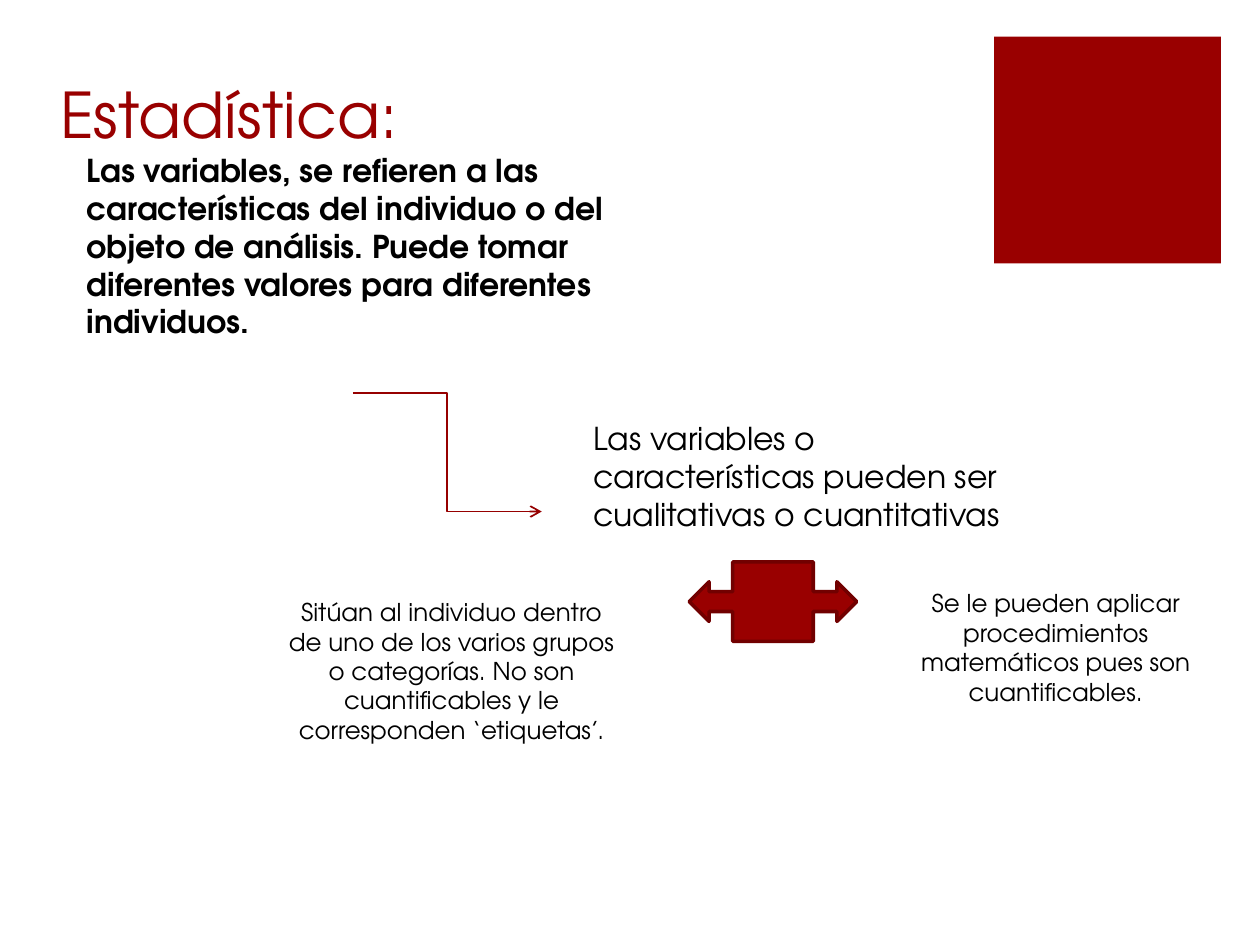
from lxml import etree
from pptx import Presentation
from pptx.dml.color import RGBColor
from pptx.enum.shapes import MSO_CONNECTOR, MSO_SHAPE
from pptx.enum.text import MSO_ANCHOR, PP_ALIGN
from pptx.oxml.ns import qn
from pptx.util import Inches, Pt

FONT = "TeX Gyre Adventor"
RED, DARK_RED, LINE_RED, BLACK = "990000", "710000", "960000", "000000"


def color(hex_value):
    return RGBColor.from_string(hex_value)


def add_text(slide, box, text, size, hex_value=BLACK, bold=False,
             align=PP_ALIGN.LEFT, anchor=MSO_ANCHOR.TOP):
    frame = slide.shapes.add_textbox(*map(Inches, box)).text_frame
    frame.word_wrap = True
    frame.vertical_anchor = anchor
    frame.text = text
    paragraph = frame.paragraphs[0]
    paragraph.alignment = align
    font = paragraph.runs[0].font
    font.name, font.size, font.bold = FONT, Pt(size), bold
    font.color.rgb = color(hex_value)


def add_block(slide, preset, box, border=None):
    block = slide.shapes.add_shape(preset, *map(Inches, box))
    block.shadow.inherit = False
    block.fill.solid()
    block.fill.fore_color.rgb = color(RED)
    if border:
        block.line.color.rgb = color(border)
        block.line.width = Pt(2)
    else:
        block.line.fill.background()


def add_elbow_arrow(slide, box):
    left, top, width, height = box
    elbow = slide.shapes.add_connector(
        MSO_CONNECTOR.ELBOW, Inches(left), Inches(top),
        Inches(left + width), Inches(top + height))
    elbow.line.color.rgb = color(LINE_RED)
    elbow.line.width = Pt(1)
    # Open arrowhead at the end, no shadow
    etree.SubElement(elbow.line._get_or_add_ln(), qn("a:tailEnd"), type="arrow")
    etree.SubElement(elbow._element.spPr, qn("a:effectLst"))


def add_header(slide, box):
    left, top, width, height = box
    add_block(slide, MSO_SHAPE.RECTANGLE, (left + 7.51, top + 0.29, 1.8, 1.8))
    add_text(slide, (left, top, width, height), "Estadística:", 36, RED,
             anchor=MSO_ANCHOR.BOTTOM)


def add_definition(slide, box):
    left, top, width, height = box
    add_text(slide, (left, top, width, height),
             "Las variables, se refieren a las características del individuo "
             "o del objeto de análisis. Puede tomar diferentes valores para "
             "diferentes individuos.", 18, bold=True)
    add_elbow_arrow(slide, (left + 2.21, top + 1.97, 1.5, 0.94))


def add_variable_types(slide, box):
    left, top, _, _ = box
    # Statement
    add_text(slide, (left + 2.44, top, 3.7, 1.01),
             "Las variables o características pueden ser cualitativas o "
             "cuantitativas", 18)
    # Two-way arrow between the kinds of variable
    add_block(slide, MSO_SHAPE.LEFT_RIGHT_ARROW_CALLOUT,
              (left + 3.3, top + 1.18, 1.33, 0.63), DARK_RED)
    # Qualitative and quantitative descriptions
    descriptions = [
        (0, 1.41, 2.83, 1.28,
         "Sitúan al individuo dentro de uno de los varios grupos o "
         "categorías. No son cuantificables y le corresponden ‘etiquetas’."),
        (5.03, 1.34, 2.36, 1.04,
         "Se le pueden aplicar procedimientos matemáticos pues son "
         "cuantificables."),
    ]
    for x, y, width, height, text in descriptions:
        add_text(slide, (left + x, top + y, width, height), text, 14,
                 align=PP_ALIGN.CENTER)


def main():
    deck = Presentation()
    deck.slide_width, deck.slide_height = Inches(10), Inches(7.5)
    slide = deck.slides.add_slide(deck.slide_layouts[6])
    add_header(slide, (0.38, 0, 9.62, 1.25))
    add_definition(slide, (0.59, 1.15, 5, 1.62))
    add_variable_types(slide, (2.17, 3.28, 7.39, 2.69))
    deck.save("out.pptx")


if __name__ == "__main__":
    main()
